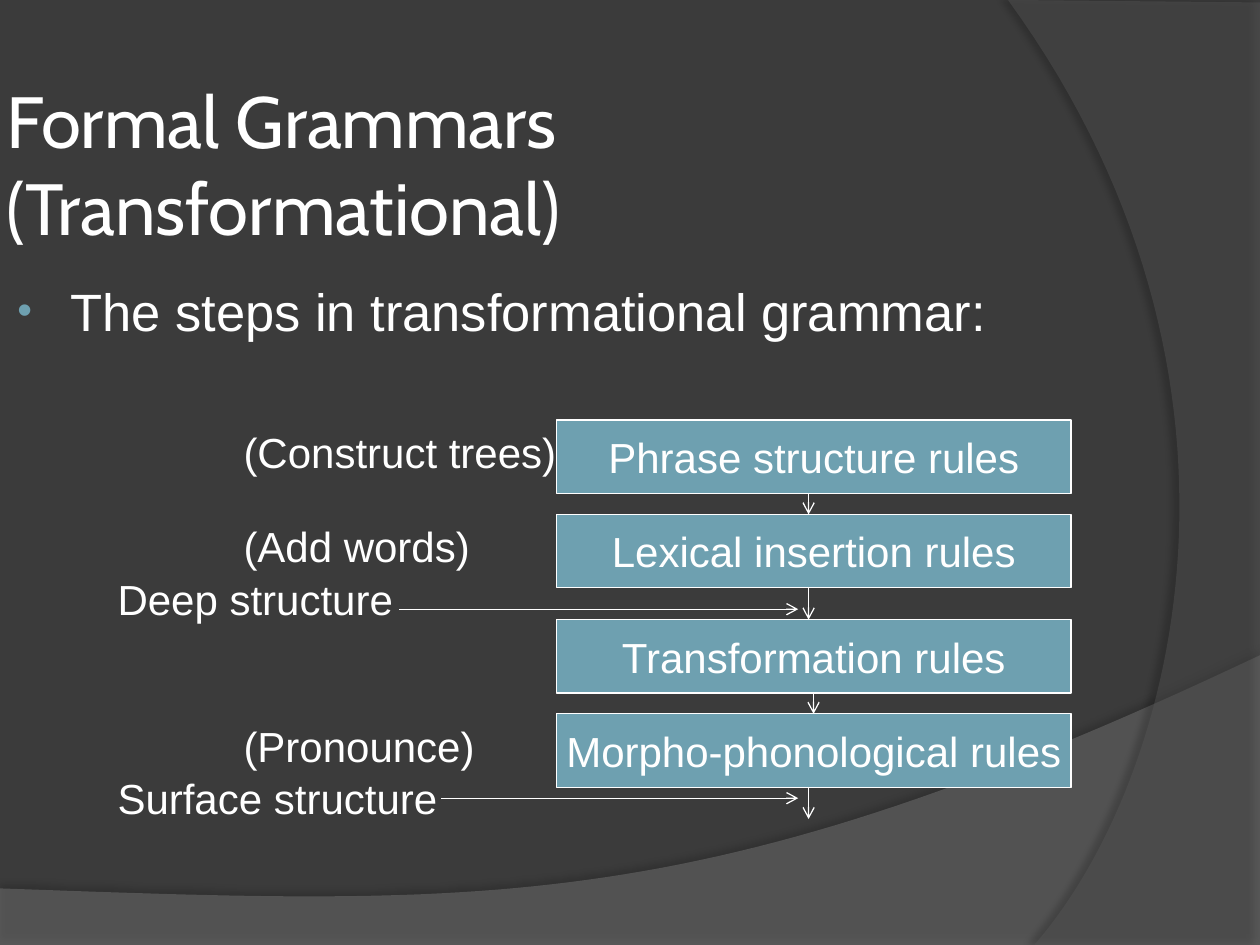
from lxml.etree import SubElement
from pptx import Presentation
from pptx.dml.color import RGBColor
from pptx.enum.shapes import MSO_CONNECTOR, MSO_SHAPE
from pptx.enum.text import MSO_ANCHOR, PP_ALIGN
from pptx.oxml.ns import qn
from pptx.util import Cm, Pt

DARK = RGBColor(0x3B, 0x3B, 0x3B)
WAVE = RGBColor(0x7C, 0x7C, 0x7C)
ARC = RGBColor(0x59, 0x59, 0x59)
TEAL = RGBColor(0x6E, 0xA0, 0xB0)
WHITE = RGBColor(0xFF, 0xFF, 0xFF)


def add(parent, tag, **attrs):
    return SubElement(parent, qn(tag), {k: str(v) for k, v in attrs.items()})


def bezier(p0, p1, p2, p3, steps=60):
    points = []
    for i in range(steps + 1):
        t = i / steps
        u = 1 - t
        weights = (u**3, 3 * u * u * t, 3 * u * t * t, t**3)
        points.append(tuple(sum(w * p[axis] for w, p in zip(weights, (p0, p1, p2, p3)))
                            for axis in (0, 1)))
    return points


class SlideBuilder:
    font = "Arial"
    size = 24
    line_width = Pt(0.75)

    def __init__(self, prs):
        self.s = prs.slides.add_slide(prs.slide_layouts[6])
        self.s.background.fill.solid()
        self.s.background.fill.fore_color.rgb = DARK

    def style(self, tf, text, size=None, font=None):
        tf.text = text
        p = tf.paragraphs[0]
        r = p.runs[0]
        r.font.name = font or self.font
        r.font.size = Pt(size or self.size)
        r.font.color.rgb = WHITE
        return p

    def swoosh(self, points, color, opacity, shade, distance, direction):
        emu = [(Cm(x), Cm(y)) for x, y in points]
        fb = self.s.shapes.build_freeform(*emu[0], scale=1.0)
        fb.add_line_segments(emu[1:], close=True)
        sp = fb.convert_to_shape()
        sp.fill.solid()
        sp.fill.fore_color.rgb = color
        sp.line.fill.background()
        sp.shadow.inherit = False
        spPr = sp.element.spPr
        add(spPr.find(qn("a:solidFill"))[0], "a:alpha", val=opacity * 1000)
        shadow = add(spPr.find(qn("a:effectLst")), "a:outerShdw", blurRad=Pt(4),
                     dist=Pt(distance), dir=direction * 60000, algn="ctr", rotWithShape=0)
        add(add(shadow, "a:srgbClr", val="000000"), "a:alpha", val=shade * 1000)

    def text(self, x, y, w, h, text, size=None, font=None, wrap=False):
        tf = self.s.shapes.add_textbox(Cm(x), Cm(y), Cm(w), Cm(h)).text_frame
        tf.word_wrap = wrap
        self.style(tf, text, size, font)
        return tf

    def title(self, x, y, w, h, text):
        tf = self.text(x, y, w, h, text, 41.4, "Cabin", True)
        tf.vertical_anchor = MSO_ANCHOR.MIDDLE
        tf.margin_left = tf.margin_right = Cm(0.13)

    def bullet(self, x, y, w, h, text):
        p = self.text(x, y, w, h, text, 30, wrap=True).paragraphs[0]
        p.space_before = Pt(6)
        pPr = p._p.get_or_add_pPr()
        pPr.set("marL", str(Cm(1.17)))
        pPr.set("indent", str(Cm(-1.07)))
        add(add(pPr, "a:buClr"), "a:srgbClr", val=TEAL)
        add(pPr, "a:buSzPct", val=80000)
        add(pPr, "a:buFont", typeface=self.font)
        add(pPr, "a:buChar", char="•")

    def box(self, x, y, w, h, text):
        sp = self.s.shapes.add_shape(MSO_SHAPE.RECTANGLE, Cm(x), Cm(y), Cm(w), Cm(h))
        sp.shadow.inherit = False
        sp.fill.solid()
        sp.fill.fore_color.rgb = TEAL
        sp.line.color.rgb = WHITE
        sp.line.width = self.line_width
        tf = sp.text_frame
        tf.word_wrap = False
        tf.vertical_anchor = MSO_ANCHOR.MIDDLE
        self.style(tf, text).alignment = PP_ALIGN.CENTER

    def arrow(self, x1, y1, x2, y2):
        c = self.s.shapes.add_connector(MSO_CONNECTOR.STRAIGHT,
                                        Cm(x1), Cm(y1), Cm(x2), Cm(y2))
        c.line.color.rgb = WHITE
        c.line.width = self.line_width
        add(c.line._get_or_add_ln(), "a:tailEnd", type="arrow")
        add(c.element.spPr, "a:effectLst")


def main():
    prs = Presentation()
    prs.slide_width, prs.slide_height = Cm(25.4), Cm(19.05)
    b = SlideBuilder(prs)

    wave = bezier((25.4, 13.21), (14.2, 18.52), (9.93, 18.26), (0, 17.91))
    b.swoosh([(0, 19.05), (25.4, 19.05)] + wave, WAVE, 45, 35, 3.5, 270)
    arc = bezier((20.85, 19.05), (23.75, 15.72), (25.86, 7.62), (20.32, 0))
    b.swoosh([(25.4, 0.05), (25.4, 19.05)] + arc, ARC, 40, 45, 4, 180)

    b.title(0, 1.7, 16.51, 3.18, "Formal Grammars (Transformational)")
    b.bullet(0, 5.5, 21.17, 11.43, "The steps in transformational grammar:")

    box_x, box_w, box_h = 11.22, 10.37, 1.48
    flow_x, flow_end = 16.3, 16.51
    steps = [
        ("Phrase structure rules", 8.47, "(Construct trees)", 6.81, 0),
        ("Lexical insertion rules", 10.37, "(Add words)", 5.08, 0),
        ("Transformation rules", 12.49, None, 0, 0.1),
        ("Morpho-phonological rules", 14.39, "(Pronounce)", 5.18, 0),
    ]
    next_tops = [step[1] for step in steps[1:]] + [flow_end]
    for (rule, top, note, note_w, shift), next_top in zip(steps, next_tops):
        b.box(box_x, top, box_w, box_h, rule)
        b.arrow(flow_x + shift, top + box_h, flow_x + shift, next_top)
        if note:
            b.text(4.66, top, note_w, 1.27, note)

    structures = [("Deep structure", 11.43, 6.07, 8.05, 12.28),
                  ("Surface structure", 15.45, 6.96, 8.89, 16.09)]
    for name, top, w, start_x, arrow_y in structures:
        b.text(2.12, top, w, 1.27, name)
        b.arrow(start_x, arrow_y, 16.09, arrow_y)

    prs.save("out.pptx")


if __name__ == "__main__":
    main()
